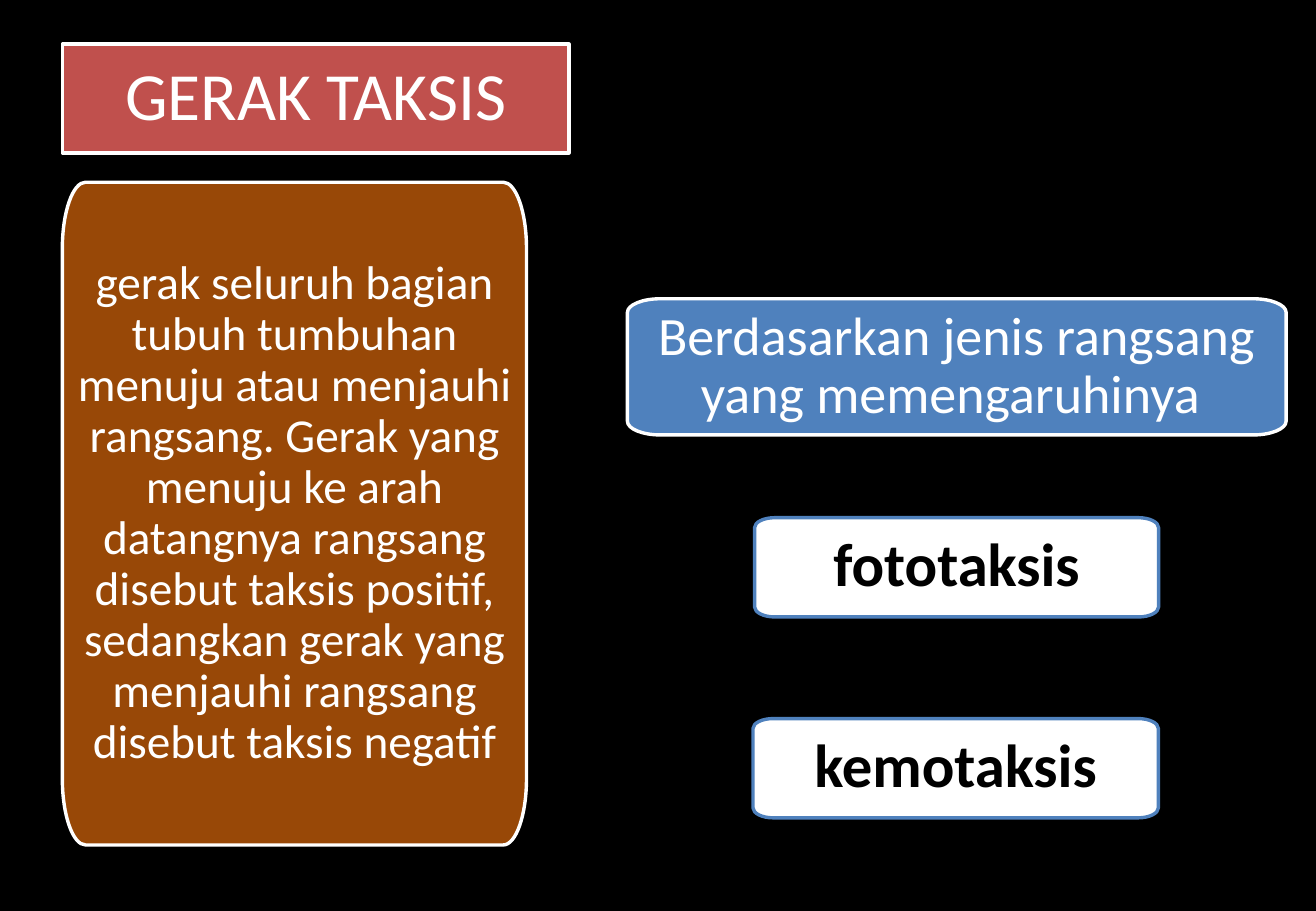
import pptx
import pptx.dml.color
import pptx.enum.text
import pptx.oxml.ns
import pptx.util
from lxml import etree

RGBColor = pptx.dml.color.RGBColor
BLACK = RGBColor(0x00, 0x00, 0x00)
WHITE = RGBColor(0xFF, 0xFF, 0xFF)
RED = RGBColor(0xC0, 0x50, 0x4D)
BROWN = RGBColor(0x98, 0x48, 0x07)
BLUE = RGBColor(0x4F, 0x81, 0xBD)

SLIDE_WIDTH = pptx.util.Inches(10.83)
SLIDE_HEIGHT = pptx.util.Inches(7.5)
COLUMN = SLIDE_WIDTH / 100
ROW = SLIDE_HEIGHT / 100

CURVE = 0.55
WIDE_INSET = 0.08
NARROW_INSET = 0.04

DEFINITION = (
    "gerak seluruh bagian tubuh tumbuhan menuju atau menjauhi rangsang. "
    "Gerak yang menuju ke arah datangnya rangsang disebut taksis positif, "
    "sedangkan gerak yang menjauhi rangsang disebut taksis negatif"
)


def grid_box(column, row, columns, rows):
    """Turn percent columns and rows into left, top, width and height."""
    return (round(column * COLUMN), round(row * ROW),
            round(columns * COLUMN), round(rows * ROW))


def round_corner(segment, start, corner, end):
    """Turn a straight corner segment into a cubic curve."""
    segment.tag = pptx.oxml.ns.qn("a:cubicBezTo")
    for child in list(segment):
        segment.remove(child)
    controls = [[round(a + CURVE * (b - a)) for a, b in zip(point, corner)]
                for point in (start, end)]
    for x, y in (*controls, end):
        etree.SubElement(segment, pptx.oxml.ns.qn("a:pt"), x=str(x), y=str(y))


def add_outline(slide, box):
    """Add a rectangle whose corners are quarter ellipses."""
    left, top, width, height = box
    radius_x, radius_y = round(width * 0.05), round(height * 0.1)
    far_x, far_y = width - radius_x, height - radius_y
    points = [(0, radius_y), (radius_x, 0), (far_x, 0), (width, radius_y),
              (width, far_y), (far_x, height), (radius_x, height), (0, far_y)]
    corners = [(0, 0), (width, 0), (width, height), (0, height)]

    builder = slide.shapes.build_freeform(*points[0])
    builder.add_line_segments(points[1:], close=True)
    shape = builder.convert_to_shape(left, top)
    segments = list(shape._element.iter(pptx.oxml.ns.qn("a:lnTo")))
    for index, corner in enumerate(corners):
        start, end = points[2 * index:2 * index + 2]
        round_corner(segments[2 * index], start, corner, end)
    return shape


def format_panel(shape, fill, line):
    shape.shadow.inherit = False
    shape.fill.solid()
    shape.fill.fore_color.rgb = fill
    shape.line.color.rgb = line
    shape.line.width = pptx.util.Pt(2)


def write_text(shape, text, size, inset, colour=WHITE, bold=False):
    frame = shape.text_frame
    frame.text = text
    frame.word_wrap = True
    frame.auto_size = pptx.enum.text.MSO_AUTO_SIZE.NONE
    frame.vertical_anchor = pptx.enum.text.MSO_ANCHOR.MIDDLE
    frame.margin_left = frame.margin_right = pptx.util.Inches(inset)
    frame.margin_top = frame.margin_bottom = pptx.util.Inches(inset * 0.75)
    paragraph = frame.paragraphs[0]
    paragraph.alignment = pptx.enum.text.PP_ALIGN.CENTER
    paragraph.line_spacing = 0.9
    font = paragraph.runs[0].font
    font.name = "Calibri"
    font.size = pptx.util.Pt(size)
    font.bold = bold
    font.color.rgb = colour


def add_title(slide, text, box):
    """Give the title placeholder the rounded outline and a red fill."""
    title = slide.shapes.title
    title.left, title.top, title.width, title.height = box
    outline = add_outline(slide, box)._element
    title._element.spPr.append(outline.spPr.find(pptx.oxml.ns.qn("a:custGeom")))
    outline.getparent().remove(outline)
    format_panel(title, RED, WHITE)
    write_text(title, text, 40, WIDE_INSET)


def add_panel(slide, text, box, size, inset, fill):
    panel = add_outline(slide, box)
    format_panel(panel, fill, WHITE)
    write_text(panel, text, size, inset)


def add_kind(slide, text, box):
    """Add a white panel that names one kind of taxis."""
    panel = add_outline(slide, box)
    format_panel(panel, WHITE, BLUE)
    write_text(panel, text, 36, NARROW_INSET, BLACK, bold=True)


def main():
    presentation = pptx.Presentation()
    presentation.slide_width = SLIDE_WIDTH
    presentation.slide_height = SLIDE_HEIGHT
    slide = presentation.slides.add_slide(presentation.slide_layouts[5])
    slide.background.fill.solid()
    slide.background.fill.fore_color.rgb = BLACK

    add_title(slide, "GERAK TAKSIS", grid_box(4.74, 4.85, 38.5, 11.93))
    add_panel(slide, DEFINITION, grid_box(4.74, 20, 35.27, 72.75),
              28, WIDE_INSET, BROWN)
    add_panel(slide, "Berdasarkan jenis rangsang yang memengaruhinya ",
              grid_box(47.68, 32.8, 50.05, 14.95), 32, NARROW_INSET, BLUE)
    add_kind(slide, "fototaksis", grid_box(57.34, 56.83, 30.7, 10.9))
    add_kind(slide, "kemotaksis", grid_box(57.22, 78.88, 30.8, 10.9))

    presentation.save("out.pptx")


if __name__ == "__main__":
    main()
